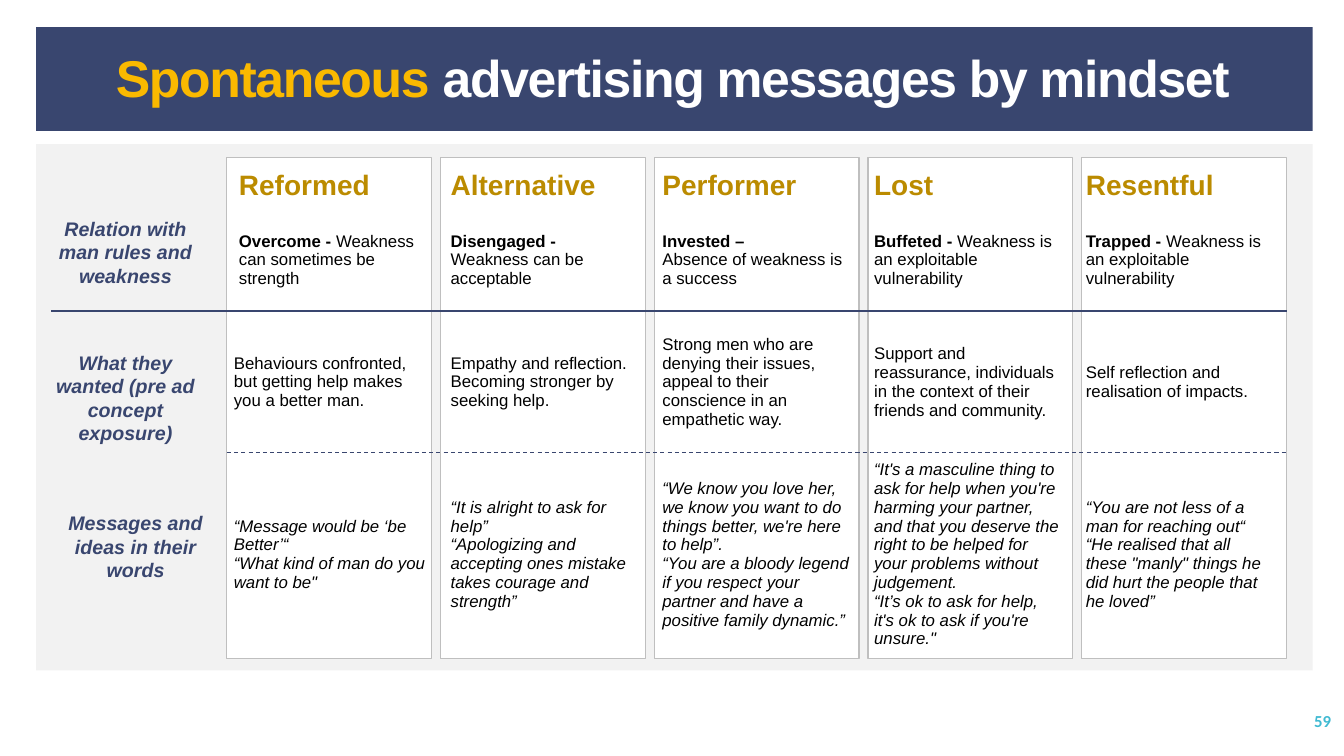
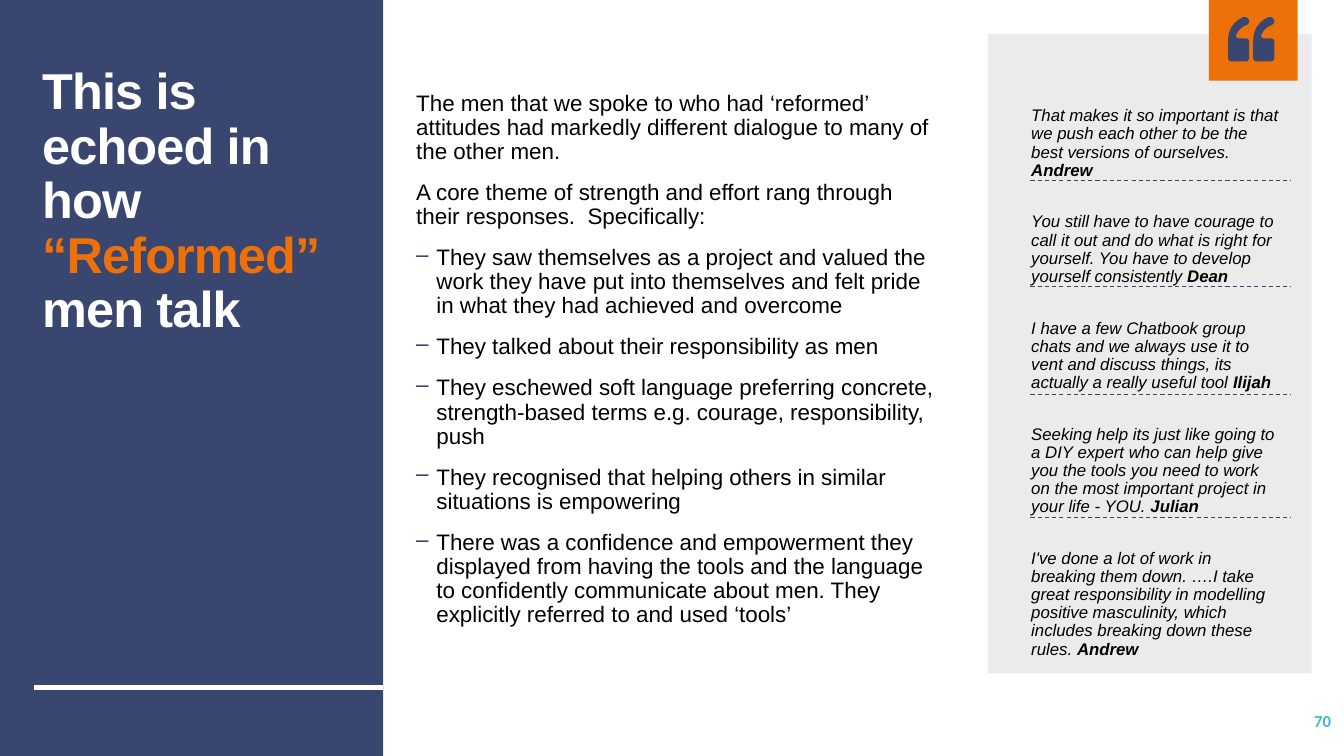
from dataclasses import dataclass
from typing import NamedTuple

from lxml.etree import SubElement
from pptx import Presentation
from pptx.dml.color import RGBColor
from pptx.enum.dml import MSO_LINE
from pptx.enum.shapes import MSO_CONNECTOR, MSO_SHAPE
from pptx.enum.text import MSO_ANCHOR, PP_ALIGN
from pptx.oxml.ns import qn
from pptx.util import Inches, Pt

NAVY = RGBColor(0x39, 0x46, 0x6F)
WHITE = RGBColor(0xFF, 0xFF, 0xFF)
BLACK = RGBColor(0x00, 0x00, 0x00)
PANEL_GREY = RGBColor(0xF2, 0xF2, 0xF2)
QUOTE_GREY = RGBColor(0xEB, 0xEB, 0xEB)
CARD_EDGE = RGBColor(0xBF, 0xBF, 0xBF)
YELLOW = RGBColor(0xFA, 0xB9, 0x00)
GOLD = RGBColor(0xBB, 0x8B, 0x00)
ORANGE = RGBColor(0xEE, 0x70, 0x08)
NUMBER_BLUE = RGBColor(0x40, 0xBA, 0xD2)

FONT = "Arial"
NO_TABLE_STYLE = "{2D5ABB26-0587-4C30-8999-92F81FD0307C}"


class Box(NamedTuple):
    left: float
    top: float
    width: float
    height: float

    def lengths(self) -> list:
        return [Inches(value) for value in self]


class Run(NamedTuple):
    text: str
    bold: bool | None = None
    color: RGBColor | None = None


class Paragraph(NamedTuple):
    runs: list[Run]
    bullet: bool = False


@dataclass(frozen=True)
class Mindset:
    name: str
    relation: list[Paragraph]
    wanted: str
    messages: list[str]
    lower_inset: float = 0.12


class RowLabel(NamedTuple):
    text: str
    box: Box


class Quote(NamedTuple):
    text: str
    speaker: str


def stance(word: str, explanation: str) -> list[Paragraph]:
    return [Paragraph([Run(word, bold=True), Run(explanation)])]


MINDSETS = [
    Mindset("Reformed", stance("Overcome - ", "Weakness can sometimes be strength"),
            "Behaviours confronted, but getting help makes you a better man.",
            ["“Message would be ‘be Better’“", "“What kind of man do you want to be\""],
            lower_inset=0.07),
    Mindset("Alternative", stance("Disengaged - ", "Weakness can be acceptable"),
            "Empathy and reflection. Becoming stronger by seeking help.",
            ["“It is alright to ask for help”",
             "“Apologizing and accepting ones mistake takes courage and strength”"]),
    Mindset("Performer",
            [Paragraph([Run("Invested –", bold=True)]),
             Paragraph([Run("Absence of weakness is a success")])],
            "Strong men who are denying their issues, appeal to their conscience "
            "in an empathetic way.",
            ["“We know you love her, we know you want to do things better, "
             "we're here to help”.",
             "“You are a bloody legend if you respect your partner and have a "
             "positive family dynamic.”"]),
    Mindset("Lost", stance("Buffeted - ", "Weakness is an exploitable vulnerability"),
            "Support and reassurance, individuals in the context of their friends "
            "and community.",
            ["“It's a masculine thing to ask for help when you're harming your partner, "
             "and that you deserve the right to be helped for your problems without "
             "judgement.",
             "“It’s ok to ask for help, it's ok to ask if you're unsure.\""]),
    Mindset("Resentful", stance("Trapped - ", "Weakness is an exploitable vulnerability"),
            "Self reflection and realisation of impacts.",
            ["“You are not less of a man for reaching out“",
             "“He realised that all these \"manly\" things he did hurt the people "
             "that he loved”"]),
]

ROW_LABELS = [
    RowLabel("Relation with man rules and weakness", Box(0.41, 2.1, 1.67, 1.04)),
    RowLabel("What they wanted (pre ad concept exposure)", Box(0.41, 3.43, 1.67, 1.04)),
    RowLabel("Messages and ideas in their words", Box(0.51, 5.02, 1.67, 0.81)),
]

INTRODUCTION = [
    "The men that we spoke to who had ‘reformed’ attitudes had markedly different "
    "dialogue to many of the other men.",
    "A core theme of strength and effort rang through their responses.  Specifically:",
]
FINDINGS = [
    "They saw themselves as a project and valued the work they have put into themselves "
    "and felt pride in what they had achieved and overcome",
    "They talked about their responsibility as men",
    "They eschewed soft language preferring concrete, strength-based terms e.g. courage, "
    "responsibility, push",
    "They recognised that helping others in similar situations is empowering",
    "There was a confidence and empowerment they displayed from having the tools and the "
    "language to confidently communicate about men. They explicitly referred to and used "
    "‘tools’",
]
QUOTES = [
    Quote("That makes it so important is that we push each other to be the best versions "
          "of ourselves. ", "Andrew"),
    Quote("You still have to have courage to call it out and do what is right for "
          "yourself. You have to develop yourself consistently ", "Dean"),
    Quote("I have a few Chatbook group chats and we always use it to vent and discuss "
          "things, its actually a really useful tool ", "Ilijah"),
    Quote("Seeking help its just like going to a DIY expert who can help give you the "
          "tools you need to work on the most important project in your life - YOU. ",
          "Julian"),
    Quote("I've done a lot of work in breaking them down. ….I take great responsibility "
          "in modelling positive masculinity, which includes breaking down these rules. ",
          "Andrew"),
]

# Outline of one quotation mark: one point is a line, three points are a Bézier curve.
MARK_START = (0, 0.4)
MARK_OUTLINE = [
    [(0, 0.43), (0.02, 0.44), (0.04, 0.44)], [(0.17, 0.44)],
    [(0.19, 0.44), (0.21, 0.43), (0.21, 0.4)], [(0.21, 0.25)],
    [(0.21, 0.22), (0.19, 0.21), (0.17, 0.21)], [(0.1, 0.21)],
    [(0.09, 0.21), (0.08, 0.2), (0.08, 0.19)], [(0.08, 0.18)],
    [(0.1, 0.13), (0.13, 0.1), (0.18, 0.08)],
    [(0.2, 0.07), (0.21, 0.06), (0.21, 0.04)],
    [(0.21, 0.02), (0.19, 0), (0.17, 0)], [(0.15, 0)],
    [(0.06, 0.04), (0, 0.12), (0, 0.23)],
]


def add_dash_bullet(paragraph) -> None:
    properties = paragraph._p.get_or_add_pPr()
    properties.set("marL", str(Inches(0.2)))
    properties.set("indent", str(-Inches(0.2)))
    color = SubElement(properties, qn("a:buClr"))
    SubElement(color, qn("a:srgbClr")).set("val", str(NAVY))
    SubElement(properties, qn("a:buChar")).set("char", "–")


def write_text(text_frame, text: str | list[Paragraph], *, size: float,
               color: RGBColor = BLACK, font: str = FONT, bold: bool = False,
               italic: bool = False, align: PP_ALIGN = PP_ALIGN.LEFT,
               line_spacing: float | None = None, gap: float = 0,
               tracking: float = 0) -> None:
    """Fill a text frame; a run's own bold and colour win over the shared format."""
    paragraphs = [Paragraph([Run(text)])] if isinstance(text, str) else text
    for index, content in enumerate(paragraphs):
        paragraph = text_frame.add_paragraph() if index else text_frame.paragraphs[0]
        paragraph.alignment = align
        paragraph.line_spacing = line_spacing
        paragraph.space_before = paragraph.space_after = Pt(gap)
        if content.bullet:
            add_dash_bullet(paragraph)
        for part in content.runs:
            run = paragraph.add_run()
            run.text = part.text
            run.font.name = font
            run.font.size = Pt(size)
            run.font.bold = bold if part.bold is None else part.bold
            run.font.italic = italic
            run.font.color.rgb = part.color or color
            if tracking:
                run._r.get_or_add_rPr().set("spc", str(round(tracking * 100)))


def add_text(slide, box: Box, text: str | list[Paragraph],
             anchor: MSO_ANCHOR = MSO_ANCHOR.TOP, **text_format) -> None:
    text_frame = slide.shapes.add_textbox(*box.lengths()).text_frame
    text_frame.word_wrap = True
    text_frame.vertical_anchor = anchor
    write_text(text_frame, text, **text_format)


def add_rectangle(slide, box: Box, fill: RGBColor, edge: RGBColor | None = None) -> None:
    shape = slide.shapes.add_shape(MSO_SHAPE.RECTANGLE, *box.lengths())
    shape.shadow.inherit = False
    shape.fill.solid()
    shape.fill.fore_color.rgb = fill
    if edge is None:
        shape.line.fill.background()
    else:
        shape.line.color.rgb = edge
        shape.line.width = Pt(0.85)


def add_rule(slide, left: float, right: float, y: float, *, color: RGBColor = NAVY,
             width: float = 0.75, dashed: bool = False) -> None:
    connector = slide.shapes.add_connector(
        MSO_CONNECTOR.STRAIGHT, Inches(left), Inches(y), Inches(right), Inches(y))
    connector.line.color.rgb = color
    connector.line.width = Pt(width)
    if dashed:
        connector.line.dash_style = MSO_LINE.DASH
    SubElement(connector._element.spPr, qn("a:effectLst"))


def add_page_number(slide, number: int) -> None:
    add_text(slide, Box(11.63, 6.95, 1.67, 0.4), str(number), MSO_ANCHOR.MIDDLE,
             size=12, font="Calibri", color=NUMBER_BLUE, bold=True, align=PP_ALIGN.RIGHT)


def mark_points(steps: int = 6) -> list[tuple[float, float]]:
    """Sample the quotation mark's outline as a list of points."""
    points = [MARK_START]
    for segment in MARK_OUTLINE:
        if len(segment) == 1:
            points += segment
            continue
        controls = [points[-1], *segment]
        for step in range(1, steps + 1):
            t = step / steps
            weights = ((1 - t) ** 3, 3 * t * (1 - t) ** 2, 3 * t * t * (1 - t), t ** 3)
            points.append(tuple(sum(weight * point[axis] for weight, point
                                    in zip(weights, controls)) for axis in (0, 1)))
    return points


def add_quotation_marks(slide, left: float, top: float) -> None:
    contours = [[(Inches(left + offset + x), Inches(top + y)) for x, y in mark_points()]
                for offset in (0, 0.25)]
    builder = slide.shapes.build_freeform(*contours[0][0])
    builder.add_line_segments(contours[0][1:])
    builder.move_to(*contours[1][0])
    builder.add_line_segments(contours[1][1:])
    shape = builder.convert_to_shape()
    shape.shadow.inherit = False
    shape.fill.solid()
    shape.fill.fore_color.rgb = NAVY
    shape.line.fill.background()


def fill_cell(cell, text: str | list[Paragraph], inset: float = 0.12,
              anchor: MSO_ANCHOR = MSO_ANCHOR.MIDDLE, **text_format) -> None:
    cell.fill.background()
    cell.margin_left = cell.margin_right = Inches(inset)
    cell.margin_top = cell.margin_bottom = Inches(0.03)
    cell.vertical_anchor = anchor
    write_text(cell.text_frame, text, **text_format)


def add_mindset_table(slide) -> None:
    row_heights = [0.4, 1.04, 1.38, 2.04]
    frame = slide.shapes.add_table(len(row_heights), len(MINDSETS),
                                   *Box(2.25, 1.66, 10.51, sum(row_heights)).lengths())
    table = frame.table
    table.first_row = table.horz_banding = False
    table._tbl.tblPr.find(qn("a:tableStyleId")).text = NO_TABLE_STYLE
    for row, height in zip(table.rows, row_heights):
        row.height = Inches(height)
    for column, mindset in enumerate(MINDSETS):
        table.columns[column].width = Inches(2.1)
        header, relation, wanted, messages = (
            table.cell(row, column) for row in range(len(row_heights)))
        fill_cell(header, mindset.name, anchor=MSO_ANCHOR.TOP, size=20, color=GOLD, bold=True)
        fill_cell(relation, mindset.relation, size=12)
        fill_cell(wanted, mindset.wanted, mindset.lower_inset, size=12)
        fill_cell(messages, [Paragraph([Run(text)]) for text in mindset.messages],
                  mindset.lower_inset, size=12, italic=True)


def build_mindset_slide(slide) -> None:
    add_rectangle(slide, Box(0.36, 1.43, 12.66, 5.22), PANEL_GREY)
    for column in range(len(MINDSETS)):
        add_rectangle(slide, Box(2.25 + column * 2.12, 1.56, 2.03, 4.97), WHITE, CARD_EDGE)
    add_mindset_table(slide)
    for label in ROW_LABELS:
        add_text(slide, label.box, label.text, size=14, color=NAVY, bold=True,
                 italic=True, align=PP_ALIGN.CENTER)
    add_rule(slide, 0.51, 12.76, 3.09, width=1.5)
    add_rule(slide, 2.25, 12.75, 4.49, dashed=True)
    add_rectangle(slide, Box(0.36, 0.27, 12.66, 1.03), NAVY)
    title = [Paragraph([Run("Spontaneous", color=YELLOW),
                        Run(" advertising messages by mindset")])]
    add_text(slide, Box(1.05, -0.03, 11.93, 1.16), title, MSO_ANCHOR.BOTTOM, size=36.9,
             color=WHITE, bold=True, line_spacing=0.9, tracking=-1)
    add_page_number(slide, 59)


def build_reformed_slide(slide) -> None:
    add_rectangle(slide, Box(9.8, 0.34, 3.21, 6.34), QUOTE_GREY)
    add_rectangle(slide, Box(11.99, 0, 0.88, 0.8), ORANGE)
    add_quotation_marks(slide, 12.18, 0.17)
    add_rectangle(slide, Box(0, 0, 3.8, 7.5), NAVY)
    add_rule(slide, 0.34, 3.8, 6.82, color=WHITE, width=3)
    title = [Paragraph([Run("This is echoed in how "), Run("“Reformed” ", color=ORANGE),
                        Run("men talk")])]
    add_text(slide, Box(0.32, 0.61, 3.36, 5.03), title, size=36, color=WHITE, bold=True,
             line_spacing=0.9, tracking=-0.6)
    body = [Paragraph([Run(text)]) for text in INTRODUCTION]
    body += [Paragraph([Run(text)], bullet=True) for text in FINDINGS]
    add_text(slide, Box(4.03, 0.69, 5.38, 5.76), body, MSO_ANCHOR.MIDDLE, size=16,
             line_spacing=0.9, gap=6)
    quotes = [Paragraph([Run(quote.text), Run(quote.speaker, bold=True)]) for quote in QUOTES]
    add_text(slide, Box(10.13, 0.8, 2.67, 6), quotes, MSO_ANCHOR.MIDDLE, size=12,
             italic=True, line_spacing=0.9, gap=12)
    for y in (1.79, 2.84, 3.91, 5.13):
        add_rule(slide, 10.22, 12.8, y, dashed=True)
    add_page_number(slide, 70)


def main() -> None:
    presentation = Presentation()
    presentation.slide_width = Inches(13.33)
    presentation.slide_height = Inches(7.5)
    blank_layout = presentation.slide_layouts[6]
    for build in (build_mindset_slide, build_reformed_slide):
        build(presentation.slides.add_slide(blank_layout))
    presentation.save("out.pptx")


if __name__ == "__main__":
    main()
